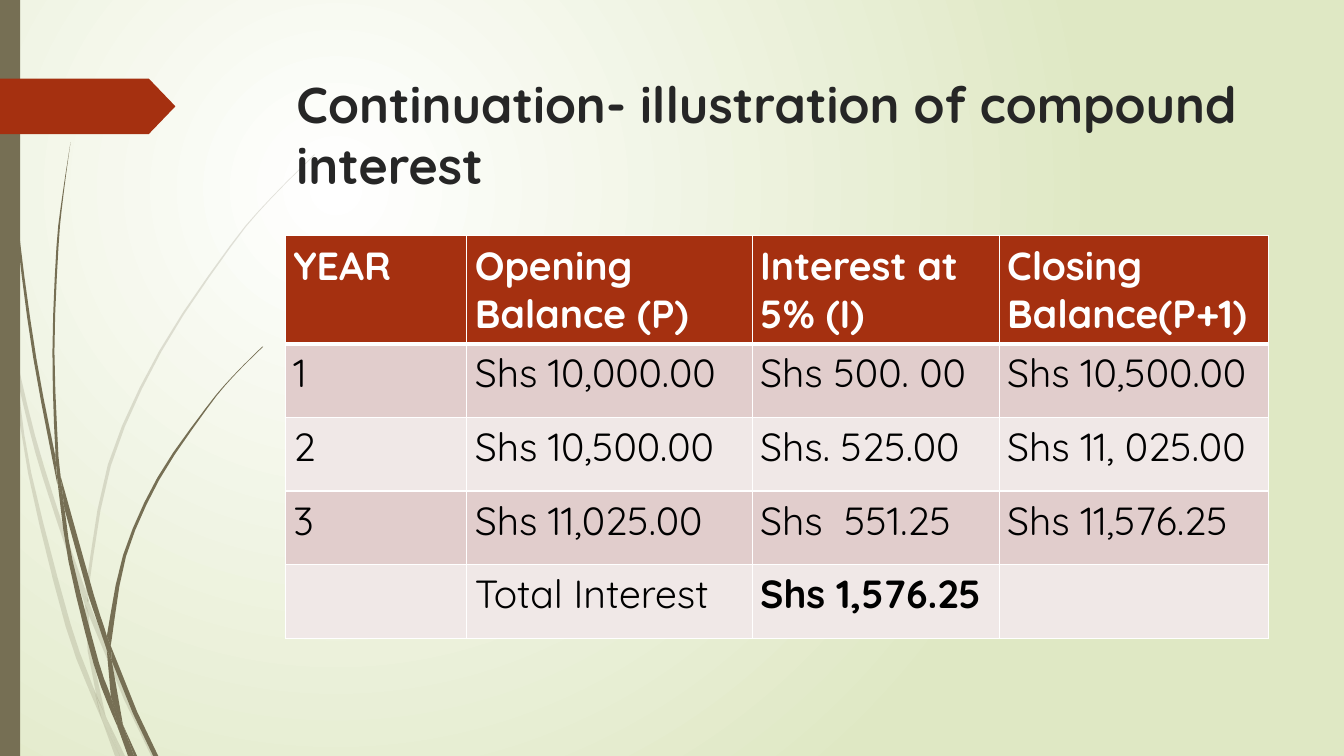
from dataclasses import dataclass

from lxml import etree
from pptx import Presentation
from pptx.dml.color import RGBColor
from pptx.enum.shapes import MSO_SHAPE
from pptx.enum.text import MSO_ANCHOR, MSO_AUTO_SIZE, PP_ALIGN
from pptx.oxml.ns import qn
from pptx.util import Inches, Pt

RECTANGLE, PENTAGON = MSO_SHAPE.RECTANGLE, MSO_SHAPE.PENTAGON
TOP, LEFT, NO_FIT = MSO_ANCHOR.TOP, PP_ALIGN.LEFT, MSO_AUTO_SIZE.NONE
TITLE_ONLY = 5


@dataclass(frozen=True)
class Theme:
    font: str = "Quicksand"
    title_size: int = 36
    table_size: int = 28
    white: str = "FFFFFF"
    black: str = "000000"
    title_ink: str = "262626"
    meadow: str = "DFE8C4"
    olive: str = "766F54"
    rust: str = "A53010"
    rose: str = "E1CDCC"
    blush: str = "F0E8E7"
    thin: int = 1
    thick: int = 3
    pale_alpha: int = 20


# Each piece of grass is a pair of edges, both listed from tip to root.
PALE_GRASS = [
    ([(0, 2.82), (0.09, 3.22), (0.11, 3.5)], [(0, 2.99), (0.1, 3.44)]),
    ([(0.14, 3.45), (0.35, 4.33), (0.62, 5.2), (0.85, 5.86)],
     [(0.17, 3.76), (0.35, 4.49), (0.58, 5.22), (0.84, 5.99)]),
    ([(0.88, 5.96), (0.92, 6.07), (1.27, 6.92), (1.55, 7.5)], [(0.88, 6.1), (1.23, 6.94), (1.5, 7.5)]),
    ([(1.05, 7.11), (1.24, 7.5)], [(1.19, 7.5)]),
    ([(0.11, 3.5), (0.17, 3.76), (0.31, 4.69), (0.7, 6.19), (0.93, 6.83), (1.01, 7.14)],
     [(0.11, 3.5), (0.28, 4.7), (0.65, 6.21), (0.92, 6.93)]),
    ([(0.84, 5.99), (0.88, 6.1), (0.91, 6.46), (1.05, 7.11)], [(0.84, 5.99), (0.87, 6.46), (0.96, 6.92)]),
    ([(3.12, 1.53), (2.68, 1.97), (2.28, 2.44), (1.58, 3.48), (1.07, 4.61), (0.85, 5.84)],
     [(3.12, 1.54), (2.68, 1.98), (2.29, 2.45), (1.6, 3.49), (1.1, 4.62), (0.88, 5.84), (0.88, 5.96)]),
    ([(1.01, 7.14), (1.19, 7.5)], [(1.14, 7.5)]),
    ([(0.85, 5.86), (0.88, 5.96), (0.88, 6.1)], [(0.84, 5.99)]),
    ([(0.93, 6.83), (1.05, 7.11), (1.19, 7.5)], [(0.99, 7.07), (1.01, 7.14)]),
]
DARK_GRASS = [
    ([(0.03, 0), (0.07, 1.1), (0.17, 2.33), (0.33, 3.55), (0.57, 4.81)],
     [(0.04, 0), (0.08, 1.09), (0.19, 2.32), (0.36, 3.55), (0.55, 4.53)]),
    ([(0.6, 4.72), (0.93, 5.9), (1.06, 6.31), (1.06, 6.45)], [(0.64, 5.05), (0.88, 5.92)]),
    ([(1.1, 6.41), (1.36, 7.06), (1.57, 7.5)], [(1.11, 6.56), (1.32, 7.08), (1.52, 7.5)]),
    ([(0.57, 4.77), (0.64, 5.05), (0.72, 5.56), (0.98, 6.57), (1.1, 6.91), (1.17, 7.22)],
     [(0.57, 4.77), (0.68, 5.57), (0.93, 6.59), (1.11, 7.08)]),
    ([(0.7, 1.41), (0.62, 1.93), (0.56, 2.45), (0.52, 3.49), (0.55, 4.49), (0.6, 4.72)],
     [(0.7, 1.41), (0.63, 1.93), (0.58, 2.45), (0.54, 3.49), (0.58, 4.53)]),
    ([(1.22, 7.19), (1.36, 7.5)], [(1.33, 7.5)]),
    ([(0.55, 4.49), (0.6, 4.72), (0.64, 5.05)], [(0.55, 4.53), (0.57, 4.77)]),
    ([(2.6, 3.44), (2.31, 3.73), (2.04, 4.05), (1.56, 4.74), (1.22, 5.51), (1.06, 6.31)],
     [(2.61, 3.44), (2.31, 3.74), (2.05, 4.06), (1.58, 4.76), (1.25, 5.52), (1.11, 6.33), (1.1, 6.41)]),
    ([(1.17, 7.22), (1.31, 7.5)], [(1.27, 7.5)]),
    ([(1.06, 6.45), (1.11, 6.56), (1.22, 7.19)], [(1.06, 6.45), (1.1, 6.91), (1.16, 7.06)]),
    ([(1.06, 6.31), (1.1, 6.41), (1.11, 6.56)], [(1.06, 6.45)]),
    ([(1.1, 6.91), (1.22, 7.19), (1.33, 7.5)], [(1.17, 7.22), (1.3, 7.5)]),
]
ROWS = [
    ["YEAR", "Opening Balance (P)", "Interest at 5% (I)", "Closing Balance(P+1)"],
    ["1", "Shs 10,000.00", "Shs 500. 00", "Shs 10,500.00"],
    ["2", "Shs 10,500.00", "Shs. 525.00", "Shs 11, 025.00"],
    ["3", "Shs 11,025.00", "Shs  551.25", "Shs 11,576.25"],
    ["", "Total Interest", "Shs 1,576.25", ""],
]


def smooth_edge(points):
    """Return points on a Catmull-Rom curve that passes through the given points."""
    steps = 3 if len(points) > 3 else 1
    padded = [points[0], *points, points[-1]]
    curve = []
    for corners in zip(padded, padded[1:], padded[2:], padded[3:]):
        for t in (step / steps for step in range(steps)):
            curve.append(tuple(
                q + t * (r - p) / 2 + t**2 * (2 * p - 5 * q + 4 * r - s) / 2 + t**3 * (3 * q - p - 3 * r + s) / 2
                for p, q, r, s in zip(*corners)))
    return curve + [points[-1]]


class SlideBuilder:
    def __init__(self, page, theme):
        self.page = page
        self.theme = theme

    def background(self):
        """Fill with a circular gradient centred a quarter of the way in."""
        fill = self.page.background.fill
        fill.gradient()
        for stop, colour, position in zip(fill.gradient_stops, (self.theme.white, self.theme.meadow), (0, 1)):
            stop.color.rgb = RGBColor.from_string(colour)
            stop.position = position
        gradient = next(self.page.element.iter(qn("a:gradFill")))
        gradient.remove(gradient.find(qn("a:lin")))
        circle = etree.SubElement(gradient, qn("a:path"), path="circle")
        etree.SubElement(circle, qn("a:fillToRect"), l="50000", t="50000", r="100000", b="100000")

    def paint(self, shape, colour, alpha=100):
        shape.shadow.inherit = False
        shape.fill.solid()
        shape.fill.fore_color.rgb = RGBColor.from_string(colour)
        shape.line.fill.background()
        if alpha < 100:
            tint = shape.element.spPr.find(qn("a:solidFill"))[0]
            etree.SubElement(tint, qn("a:alpha"), val=str(alpha * 1000))

    def grass(self, edges, alpha=100):
        first, second = map(smooth_edge, edges)
        outline = [(Inches(x), Inches(y)) for x, y in first + second[::-1]]
        builder = self.page.shapes.build_freeform(*outline[0])
        builder.add_line_segments(outline[1:], close=True)
        self.paint(builder.convert_to_shape(), self.theme.olive, alpha)

    def shape(self, kind, area, colour):
        shape = self.page.shapes.add_shape(kind, *map(Inches, area))
        self.paint(shape, colour)
        return shape

    def add_span(self, para, text, size, colour, bold):
        span = para.add_run()
        span.text = text
        for name, value in {"name": self.theme.font, "size": Pt(size), "bold": bold}.items():
            setattr(span.font, name, value)
        span.font.color.rgb = RGBColor.from_string(colour)

    def title(self, text, area):
        box = self.page.shapes.title
        for name, value in zip(("left", "top", "width", "height"), area):
            setattr(box, name, Inches(value))
        for name, value in {"word_wrap": True, "auto_size": NO_FIT, "vertical_anchor": TOP}.items():
            setattr(box.text_frame, name, value)
        para = box.text_frame.paragraphs[0]
        para.alignment = LEFT
        self.add_span(para, text, self.theme.title_size, self.theme.title_ink, True)
        box.element.getparent().append(box.element)  # bring in front of the grass

    def borders(self, cell, widths):
        properties = cell._tc.get_or_add_tcPr()
        for index, (side, width) in enumerate(widths.items()):
            line = etree.Element(qn(f"a:ln{side}"), w=str(Pt(width)))
            fill = etree.SubElement(line, qn("a:solidFill"))
            etree.SubElement(fill, qn("a:srgbClr"), val=self.theme.white)
            properties.insert(index, line)

    def table(self, rows, area, column_widths, row_heights, bold_cell):
        theme = self.theme
        margins = {"margin_left": 0.08, "margin_right": 0.08, "margin_top": 0.05, "margin_bottom": 0.05}
        table = self.page.shapes.add_table(len(rows), len(rows[0]), *map(Inches, area)).table
        for column, width in zip(table.columns, column_widths):
            column.width = Inches(width)
        for r, (row, height) in enumerate(zip(rows, row_heights)):
            table.rows[r].height = Inches(height)
            heading = r == 0
            fill = theme.rust if heading else (theme.blush, theme.rose)[r % 2]
            ink = theme.white if heading else theme.black
            widths = {"L": theme.thin, "R": theme.thin, "T": theme.thick if r == 1 else theme.thin,
                      "B": theme.thick if heading else theme.thin}
            for c, text in enumerate(row):
                cell = table.cell(r, c)
                for name, value in margins.items():
                    setattr(cell, name, Inches(value))
                cell.fill.solid()
                cell.fill.fore_color.rgb = RGBColor.from_string(fill)
                self.borders(cell, widths)
                if text:
                    self.add_span(cell.text_frame.paragraphs[0], text, theme.table_size, ink,
                                  heading or (r, c) == bold_cell)


def main():
    deck = Presentation()
    deck.slide_width, deck.slide_height = Inches(13.33), Inches(7.5)
    theme = Theme()
    slide = SlideBuilder(deck.slides.add_slide(deck.slide_layouts[TITLE_ONLY]), theme)
    slide.background()
    for pieces, alpha in ((PALE_GRASS, theme.pale_alpha), (DARK_GRASS, 100)):
        for edges in pieces:
            slide.grass(edges, alpha)
    slide.shape(RECTANGLE, (0, 0, 0.2, 7.5), theme.olive)
    slide.shape(PENTAGON, (0, 0.78, 1.74, 0.55), theme.rust).adjustments[0] = 0.48
    slide.title("Continuation- illustration of compound interest", (2.84, 0.68, 9.75, 1.4))
    slide.table(ROWS, (2.83, 2.34, 9.75, 3.97), [1.8, 2.83, 2.45, 2.67], [1.05] + [0.73] * 4, (4, 2))
    deck.save("out.pptx")


if __name__ == "__main__":
    main()
